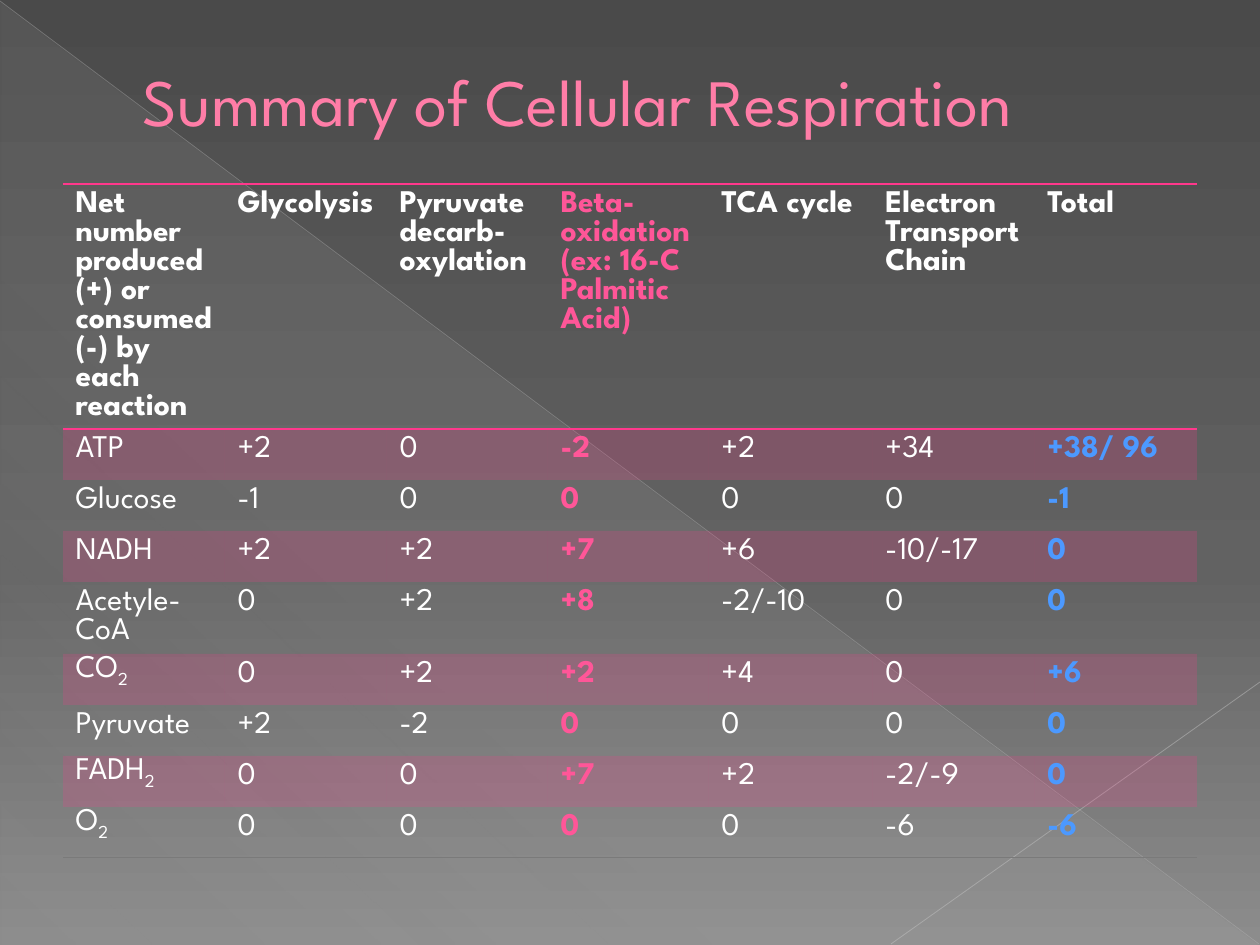
from lxml import etree
from pptx import Presentation
from pptx.dml.color import RGBColor
from pptx.enum.shapes import MSO_CONNECTOR, MSO_SHAPE
from pptx.enum.text import MSO_ANCHOR
from pptx.oxml.ns import qn
from pptx.util import Pt

STRAIGHT = MSO_CONNECTOR.STRAIGHT
TRIANGLE = MSO_SHAPE.RIGHT_TRIANGLE
MIDDLE = MSO_ANCHOR.MIDDLE

WHITE = RGBColor(0xFF, 0xFF, 0xFF)
TITLE_PINK = RGBColor(0xFF, 0x7D, 0xA7)
TITLE_EDGE = RGBColor(0xB1, 0x27, 0x61)
PINK = RGBColor(0xFF, 0x56, 0x98)
BLUE = RGBColor(0x4C, 0x99, 0xFF)
RULE = RGBColor(0xFF, 0x38, 0x8C)
BOTTOM_RULE = RGBColor(0x7A, 0x7A, 0x7A)
GREY_DARK = RGBColor(0x4A, 0x4A, 0x4A)
GREY_MID = RGBColor(0x62, 0x62, 0x62)
GREY_LIGHT = RGBColor(0x8C, 0x8C, 0x8C)
VEIL = RGBColor(0xD2, 0xD2, 0xD2)
LONG_RAY = RGBColor(0xBF, 0xBF, 0xBF)
SHORT_RAY = RGBColor(0xC6, 0xC6, 0xC6)

NO_GRID = "{2D5ABB26-0587-4C30-8999-92F81FD0307C}"
COLUMNS = [162, 162, 161, 161, 164, 162, 162]
ROWS = [245, 51, 51, 51, 72, 51, 51, 51, 51]
BETA, TOTAL = 3, 6
# An underscore marks the subscript that follows.
CELLS = [
    ["Net number produced (+) or consumed (-) by each reaction", "Glycolysis",
     "Pyruvate decarb-oxylation", "Beta-oxidation (ex: 16-C Palmitic Acid)",
     "TCA cycle", "Electron\nTransport\nChain", "Total"],
    ["ATP", "+2", "0", "-2", "+2", "+34", "+38/ 96"],
    ["Glucose", "-1", "0", "0", "0", "0", "-1"],
    ["NADH", "+2", "+2", "+7", "+6", "-10/-17", "0"],
    ["Acetyle-\nCoA", "0", "+2", "+8", "-2/-10", "0", "0"],
    ["CO_2", "0", "+2", "+2", "+4", "0", "+6"],
    ["Pyruvate", "+2", "-2", "0", "0", "0", "0"],
    ["FADH_2", "0", "0", "+7", "+2", "-2/-9", "0"],
    ["O_2", "0", "0", "0", "0", "-6", "-6"],
]


def px(n):
    return round(n * 914400 / 126)


def sub(parent, tag, **attrs):
    el = etree.SubElement(parent, qn(tag))
    for name, value in attrs.items():
        el.set(name, str(value))
    return el


def add_color(parent, color, alpha=100):
    clr = sub(parent, "a:srgbClr", val=color)
    if alpha < 100:
        sub(clr, "a:alpha", val=alpha * 1000)


def set_alpha(parent, alpha):
    sub(parent.find(".//" + qn("a:srgbClr")), "a:alpha", val=alpha * 1000)


def set_gradient(fill, owner, stops, angle):
    """Fill owner with (position, colour, opacity) stops."""
    fill.gradient()
    grad = owner.find(".//" + qn("a:gradFill"))
    for child in list(grad):
        grad.remove(child)
    stop_list = sub(grad, "a:gsLst")
    for pos, color, alpha in stops:
        add_color(sub(stop_list, "a:gs", pos=pos * 1000), color, alpha)
    sub(grad, "a:lin", ang=angle * 60000, scaled=0)


def add_line(parent, tag, color, width):
    ln = sub(parent, tag, w=Pt(width))
    add_color(sub(ln, "a:solidFill"), color)
    return ln


class Deck:
    font = "League Spartan"
    body_size = 18
    body_leading = 16.56
    title_size = 37.8

    def __init__(self, width, height):
        self.prs = Presentation()
        self.prs.slide_width, self.prs.slide_height = px(width), px(height)
        self.s = self.prs.slides.add_slide(self.prs.slide_layouts[6])

    def background(self, stops, angle):
        set_gradient(self.s.background.fill, self.s.element, stops, angle)

    def triangle(self, x, y, w, h, stops, angle):
        sp = self.s.shapes.add_shape(TRIANGLE, px(x), px(y), px(w), px(h))
        sp.shadow.inherit = False
        sp.line.fill.background()
        set_gradient(sp.fill, sp.element.spPr, stops, angle)

    def ray(self, x1, y1, x2, y2, color, width, alpha):
        sp = self.s.shapes.add_connector(STRAIGHT, px(x1), px(y1), px(x2), px(y2))
        sp.line.color.rgb = color
        sp.line.width = Pt(width)
        set_alpha(sp.element.spPr, alpha)
        sub(sp.element.spPr, "a:effectLst")

    def style(self, r, size, color, bold=False):
        r.font.name = self.font
        r.font.size = Pt(size)
        r.font.color.rgb = color
        r.font.bold = bold

    def title(self, x, y, w, h, text, indent):
        tf = self.s.shapes.add_textbox(px(x), px(y), px(w), px(h)).text_frame
        tf.word_wrap = True
        tf.vertical_anchor = MIDDLE
        tf.margin_left = px(indent)
        tf.text = text
        r = tf.paragraphs[0].runs[0]
        self.style(r, self.title_size, TITLE_PINK)
        rpr = r.font._element
        rpr.insert(0, add_line(rpr, "a:ln", TITLE_EDGE, 0.5))

    def cell(self, cell, text, color, bold, banded, rules):
        base, _, subscript = text.partition("_")
        tf = cell.text_frame
        tf.text = base
        if subscript:
            r = tf.paragraphs[0].add_run()
            r.text = subscript
            r.font._element.set("baseline", "-25000")
        for p in tf.paragraphs:
            p.line_spacing = Pt(self.body_leading)
            for r in p.runs:
                self.style(r, self.body_size, color, bold)
        tcpr = cell._tc.get_or_add_tcPr()
        for tag, rule, width in rules:
            add_line(tcpr, tag, rule, width)
        if banded:
            cell.fill.solid()
            cell.fill.fore_color.rgb = RULE
            set_alpha(tcpr.find(qn("a:solidFill")), 20)
        else:
            cell.fill.background()

    def table(self, x, y, columns, rows, cells):
        frame = self.s.shapes.add_table(len(rows), len(columns), px(x), px(y),
                                        px(sum(columns)), px(sum(rows)))
        table = frame.table
        table.first_row = table.horz_banding = False
        frame.element.find(".//" + qn("a:tableStyleId")).text = NO_GRID
        for column, width in zip(table.columns, columns):
            column.width = px(width)
        for row, height in zip(table.rows, rows):
            row.height = px(height)
        rules = {0: [("a:lnT", RULE, 1), ("a:lnB", RULE, 1)],
                 len(rows) - 1: [("a:lnB", BOTTOM_RULE, 0.5)]}
        for i, texts in enumerate(cells):
            for j, text in enumerate(texts):
                color = PINK if j == BETA else BLUE if j == TOTAL and i else WHITE
                bold = i == 0 or j in (BETA, TOTAL)
                self.cell(table.cell(i, j), text, color, bold, i % 2 == 1,
                          rules.get(i, []))


def main():
    deck = Deck(1260, 945)
    deck.background([(0, GREY_DARK, 100), (60, GREY_MID, 100),
                     (100, GREY_LIGHT, 100)], 90)
    deck.triangle(1, 2, 1258, 943, [(0, VEIL, 10), (70, VEIL, 8), (100, VEIL, 1)], 133)
    deck.ray(0, 1, 1259, 944, LONG_RAY, 0.39, 35)
    deck.ray(1260, 682, 891, 944, SHORT_RAY, 0.47, 45)
    deck.title(63, 37, 1134, 126, "Summary of Cellular Respiration", 80)
    deck.table(63, 184, COLUMNS, ROWS, CELLS)
    deck.prs.save("out.pptx")


if __name__ == "__main__":
    main()
